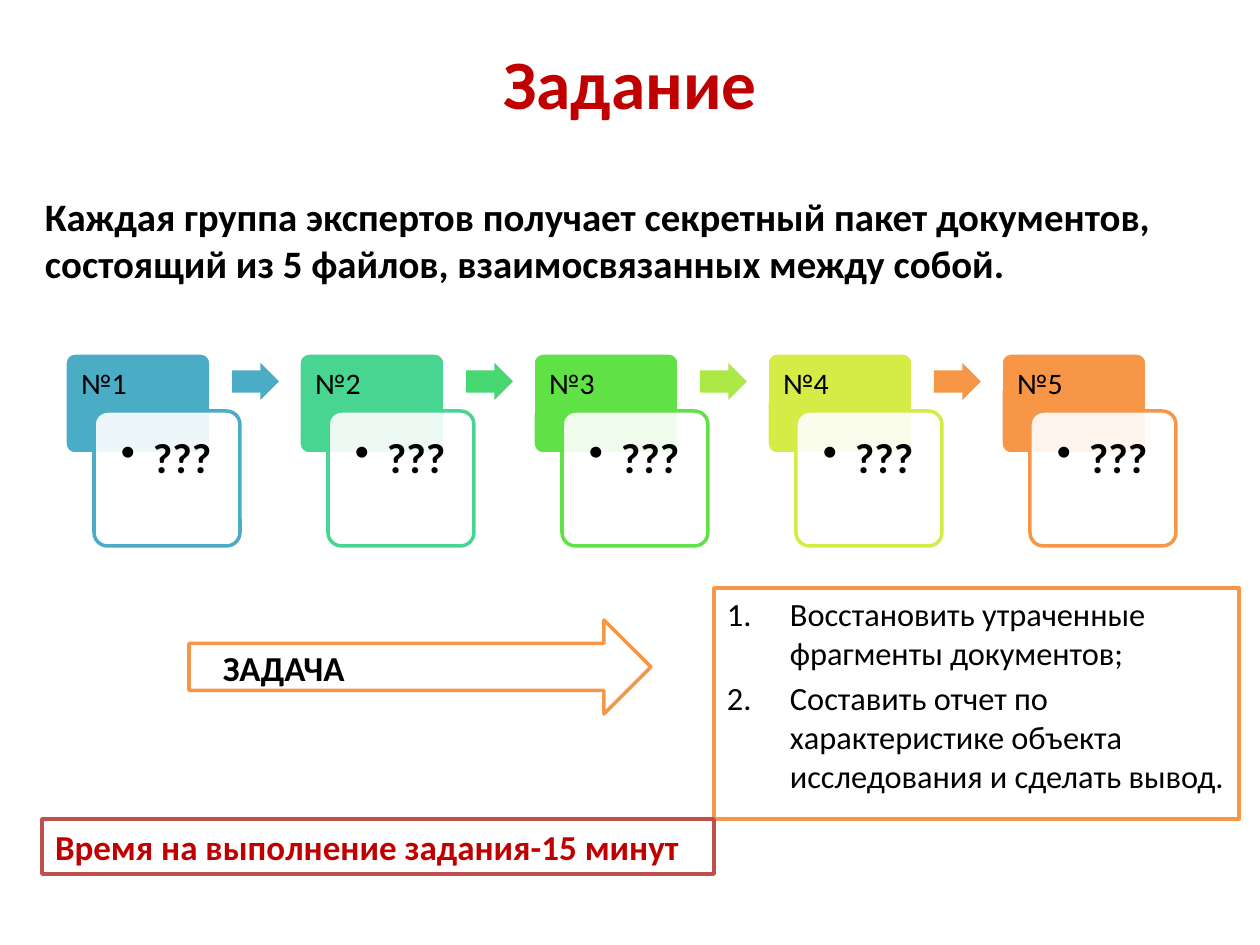
"""Build the assignment slide: five linked files, the task and the time limit."""
from dataclasses import dataclass
from typing import Optional

from pptx import Presentation
from pptx import util as u
from pptx.dml.color import RGBColor
from pptx.enum import shapes, text
from pptx.oxml import ns, xmlchemy

PX = u.Inches(1) / 126
BLACK = RGBColor(0x00, 0x00, 0x00)
WHITE = RGBColor(0xFF, 0xFF, 0xFF)
RED = RGBColor(0xC0, 0x00, 0x00)
BRICK = RGBColor(0xC0, 0x50, 0x4D)
ORANGE = RGBColor(0xF7, 0x96, 0x46)
BLUE = RGBColor(0x4B, 0xAC, 0xC6)
MINT = RGBColor(0x48, 0xD4, 0x91)
EMERALD = RGBColor(0x47, 0xD8, 0x72)
GREEN = RGBColor(0x60, 0xE1, 0x46)
LIME = RGBColor(0xAC, 0xE9, 0x46)
YELLOW = RGBColor(0xD5, 0xEC, 0x46)

KIND = shapes.MSO_SHAPE
TOP, MIDDLE, BOTTOM = (text.MSO_ANCHOR.TOP, text.MSO_ANCHOR.MIDDLE,
                       text.MSO_ANCHOR.BOTTOM)
STEP_LEFT, STEP_PITCH = 65, 234


@dataclass(frozen=True)
class Box:
    left: int
    top: int
    width: int
    height: int

    def emu(self) -> list[int]:
        return [round(v * PX) for v in (self.left, self.top, self.width, self.height)]


@dataclass(frozen=True)
class Style:
    size: float
    color: RGBColor = BLACK
    bold: bool = False
    align: text.PP_ALIGN = text.PP_ALIGN.LEFT
    anchor: text.MSO_ANCHOR = TOP
    insets: tuple[int, int, int, int] = (13, 6, 13, 6)
    line_spacing: Optional[float] = None
    space_before: float = 0
    bullet: Optional[tuple[str, dict[str, str]]] = None
    indent: int = 0


@dataclass(frozen=True)
class Step:
    label: str
    color: RGBColor
    arrow: Optional[RGBColor]


STEPS = [
    Step("№1", BLUE, BLUE),
    Step("№2", MINT, EMERALD),
    Step("№3", GREEN, LIME),
    Step("№4", YELLOW, ORANGE),
    Step("№5", ORANGE, None),
]
LABEL = Style(17, insets=(16, 16, 16, 9), line_spacing=0.9)
SECRET = Style(24, bold=True, insets=(24, 24, 12, 24), line_spacing=0.9,
               bullet=("a:buChar", {"char": "•"}), indent=32)
TITLE = Style(39.6, RED, True, text.PP_ALIGN.CENTER, MIDDLE)
INTRO = Style(22.2, bold=True, anchor=BOTTOM, insets=(13, 0, 13, 50))
TASKS = Style(18.5, space_before=3.7,
              bullet=("a:buAutoNum", {"type": "arabicPeriod"}), indent=63)
CAPTION = Style(20, bold=True)
TIME = Style(20, RED, True)


def apply(target, values: dict) -> None:
    for name, value in values.items():
        setattr(target, name, value)


def add_child(parent, tag: str, attributes: dict[str, str]) -> None:
    child = xmlchemy.OxmlElement(tag)
    for name, value in attributes.items():
        child.set(name, value)
    parent.append(child)


def write(shape, lines: list[str], style: Style) -> None:
    frame = shape.text_frame
    left, top, right, bottom = (round(v * PX) for v in style.insets)
    apply(frame, dict(word_wrap=True, vertical_anchor=style.anchor, margin_left=left,
                      margin_top=top, margin_right=right, margin_bottom=bottom))
    for number, line in enumerate(lines):
        paragraph = frame.add_paragraph() if number else frame.paragraphs[0]
        apply(paragraph, dict(alignment=style.align, line_spacing=style.line_spacing,
                              space_before=u.Pt(style.space_before)))
        run = paragraph.add_run()
        run.text = line
        apply(run.font, dict(name="Calibri", size=u.Pt(style.size), bold=style.bold))
        run.font.color.rgb = style.color
        if style.bullet:
            properties = paragraph._p.get_or_add_pPr()
            indent = round(style.indent * PX)
            properties.set("marL", str(indent))
            properties.set("indent", str(-indent))
            add_child(properties, *style.bullet)


def add_text(slide, box: Box, lines: list[str], style: Style) -> None:
    write(slide.shapes.add_textbox(*box.emu()), lines, style)


def add_figure(slide, kind: shapes.MSO_SHAPE, box: Box, fill: RGBColor,
               line: Optional[RGBColor] = None, adjust: tuple[float, ...] = (),
               opacity: int = 100):
    figure = slide.shapes.add_shape(kind, *box.emu())
    figure.shadow.inherit = False
    figure.fill.solid()
    figure.fill.fore_color.rgb = fill
    if line is None:
        figure.line.fill.background()
    else:
        figure.line.color.rgb = line
        figure.line.width = u.Pt(2)
    for index, value in enumerate(adjust):
        figure.adjustments[index] = value
    if opacity < 100:
        color = figure._element.spPr.find(ns.qn("a:solidFill")).find(ns.qn("a:srgbClr"))
        add_child(color, "a:alpha", {"val": str(opacity * 1000)})
    return figure


def add_step(slide, left: int, step: Step) -> None:
    add_figure(slide, KIND.ROUNDED_RECTANGLE, Box(left, 353, 146, 101),
               step.color, WHITE, (0.1,))
    add_text(slide, Box(left, 353, 146, 58), [step.label], LABEL)
    add_figure(slide, KIND.ROUNDED_RECTANGLE, Box(left + 29, 411, 146, 135),
               WHITE, step.color, (0.1,), 90)
    add_text(slide, Box(left + 32, 415, 137, 127), ["???"], SECRET)
    if step.arrow is not None:
        add_figure(slide, KIND.RIGHT_ARROW, Box(left + 167, 363, 47, 37),
                   step.arrow, adjust=(0.6, 0.5))


def main() -> None:
    deck = Presentation()
    apply(deck, dict(slide_width=u.Inches(10), slide_height=u.Inches(7.5)))
    slide = deck.slides.add_slide(deck.slide_layouts[6])

    add_text(slide, Box(63, 38, 1134, 88), ["Задание"], TITLE)
    add_text(slide, Box(32, 210, 1144, 126),
             ["Каждая группа экспертов получает секретный пакет документов, "
              "состоящий из 5 файлов, взаимосвязанных между собой."], INTRO)
    tasks = add_figure(slide, KIND.RECTANGLE, Box(714, 588, 525, 231), WHITE, ORANGE)
    write(tasks, ["Восстановить утраченные фрагменты документов;",
                  "Составить отчет по характеристике объекта исследования "
                  "и сделать вывод."], TASKS)

    for index, step in enumerate(STEPS):
        add_step(slide, STEP_LEFT + index * STEP_PITCH, step)

    add_figure(slide, KIND.RIGHT_ARROW, Box(189, 620, 462, 94), WHITE, ORANGE)
    add_text(slide, Box(210, 640, 368, 55), ["ЗАДАЧА"], CAPTION)
    time_limit = add_figure(slide, KIND.RECTANGLE, Box(42, 819, 672, 55), WHITE, BRICK)
    write(time_limit, ["Время на выполнение задания-15 минут"], TIME)

    deck.save("out.pptx")


if __name__ == "__main__":
    main()
